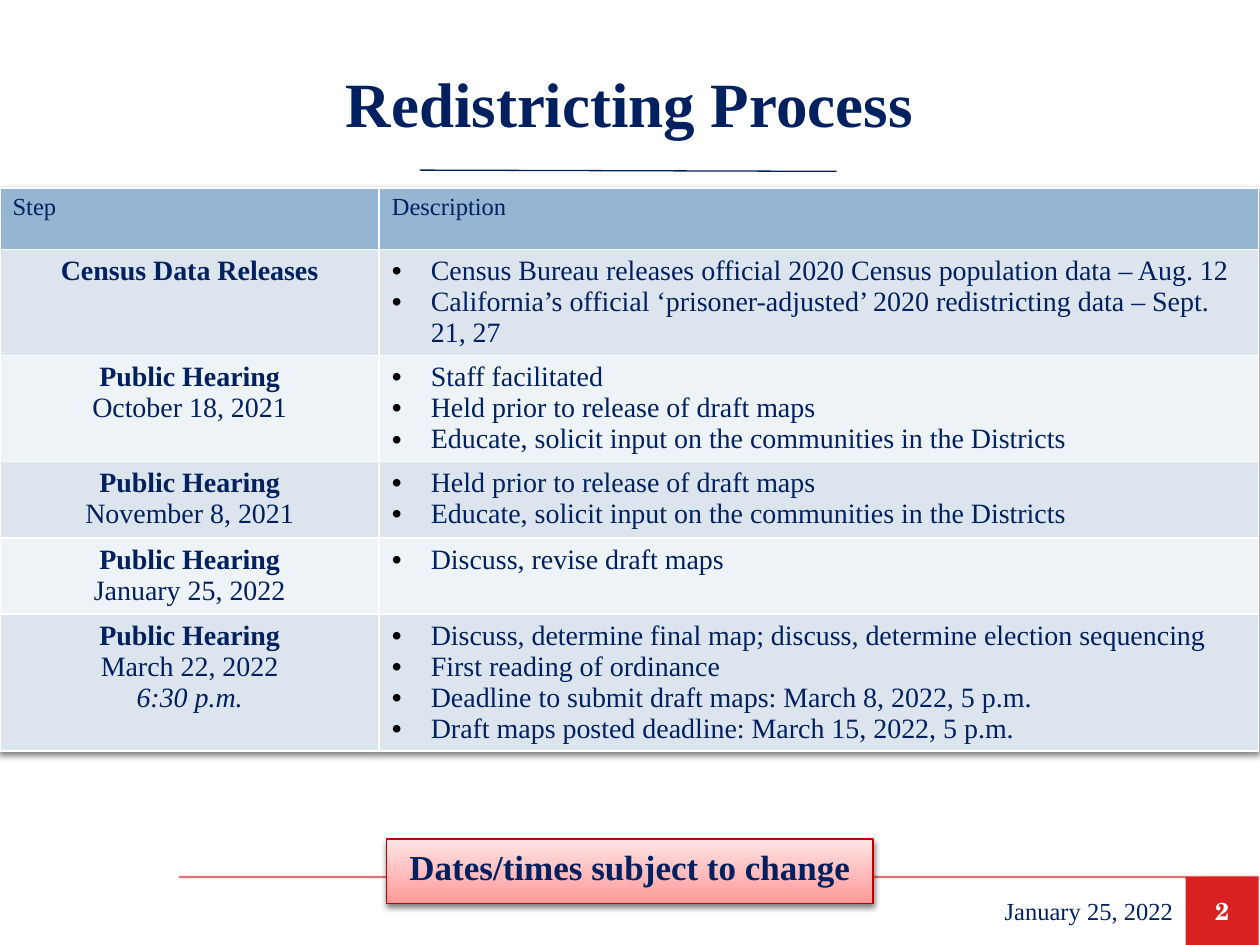
from lxml.etree import SubElement
from pptx import Presentation
from pptx.dml.color import RGBColor
from pptx.enum.shapes import MSO_CONNECTOR, MSO_SHAPE
from pptx.enum.text import MSO_ANCHOR, MSO_AUTO_SIZE, PP_ALIGN
from pptx.oxml.ns import qn
from pptx.util import Inches, Pt

NAVY, WHITE, RED = "002060", "FFFFFF", "D92121"
SERIF = "Times New Roman"
HEADER = ["Step", "Description"]
HELD = "Held prior to release of draft maps"
EDUCATE = "Educate, solicit input on the communities in the Districts"
# Row height, step lines, description bullets
STEPS = [
    (0.84, ["Census Data Releases"],
     ["Census Bureau releases official 2020 Census population data – Aug. 12",
      "California’s official ‘prisoner-adjusted’ 2020 redistricting data – Sept. 21, 27"]),
    (0.84, ["Public Hearing", "October 18, 2021"],
     ["Staff facilitated", HELD, EDUCATE]),
    (0.61, ["Public Hearing", "November 8, 2021"], [HELD, EDUCATE]),
    (0.6, ["Public Hearing", "January 25, 2022"], ["Discuss, revise draft maps"]),
    (1.08, ["Public Hearing", "March 22, 2022", "6:30 p.m."],
     ["Discuss, determine final map; discuss, determine election sequencing",
      "First reading of ordinance",
      "Deadline to submit draft maps: March 8, 2022, 5 p.m.",
      "Draft maps posted deadline: March 15, 2022, 5 p.m."]),
]


def color(value):
    return RGBColor.from_string(value)


def format_runs(paragraph, size, bold=False, italic=False, value=NAVY, name=SERIF):
    for run in paragraph.runs:
        font = run.font
        font.name, font.size = name, Pt(size)
        font.bold, font.italic = bold, italic
        font.color.rgb = color(value)


def place(shape, box):
    shape.left, shape.top, shape.width, shape.height = map(Inches, box)


def set_text(shape, text, size, align, anchor, **style):
    frame = shape.text_frame
    frame.text = text
    frame.word_wrap = True
    frame.auto_size = MSO_AUTO_SIZE.NONE
    frame.vertical_anchor = anchor
    frame.paragraphs[0].alignment = align
    format_runs(frame.paragraphs[0], size, **style)


def add_shadow(parent):
    effects = SubElement(parent, qn("a:effectLst"))
    shadow = SubElement(effects, qn("a:outerShdw"), blurRad="40000", dist="23000",
                        dir="5400000", rotWithShape="0")
    black = SubElement(shadow, qn("a:srgbClr"), val="000000")
    SubElement(black, qn("a:alpha"), val="50000")
    return effects


def add_line(slide, start, end, value, width, opacity=100):
    line = slide.shapes.add_connector(
        MSO_CONNECTOR.STRAIGHT, *map(Inches, start + end))
    line.line.color.rgb = color(value)
    line.line.width = Pt(width)
    properties = line._element.spPr
    if opacity < 100:
        SubElement(properties.find(".//" + qn("a:srgbClr")), qn("a:alpha"),
                   val=str(opacity * 1000))
    SubElement(properties, qn("a:effectLst"))


def add_title(slide, box):
    title = slide.shapes.title
    place(title, box)
    set_text(title, "Redistricting Process", 36, PP_ALIGN.CENTER,
             MSO_ANCHOR.MIDDLE, bold=True)
    left, top, width, height = box
    bottom = top + height
    add_line(slide, (3.33, bottom), (6.64, bottom + 0.01), NAVY, 0.75)


def add_footer(slide, box):
    left, top, width, height = box
    right, number_width, date_width = left + width, 0.58, 1.74
    add_line(slide, (left, top), (right, top), "C80000", 1.25, opacity=55)

    # Slide number
    number_left = right - number_width
    number = slide.shapes.add_shape(
        MSO_SHAPE.RECTANGLE, *map(Inches, (number_left, top, number_width, height)))
    number.shadow.inherit = False
    number.fill.solid()
    number.fill.fore_color.rgb = color(RED)
    number.line.fill.background()
    set_text(number, "2", 14, PP_ALIGN.CENTER, MSO_ANCHOR.MIDDLE,
             bold=True, value=WHITE, name="TeX Gyre Schola")

    # Date
    date = slide.shapes.add_textbox(
        *map(Inches, (number_left - date_width, top, date_width, height)))
    set_text(date, "January 25, 2022", 14, PP_ALIGN.RIGHT, MSO_ANCHOR.MIDDLE)


def add_bullet(paragraph):
    properties = paragraph._p.get_or_add_pPr()
    properties.set("marL", str(Inches(0.31)))
    properties.set("indent", str(-Inches(0.31)))
    bullet_color = SubElement(properties, qn("a:buClr"))
    SubElement(bullet_color, qn("a:srgbClr"), val="000000")
    SubElement(properties, qn("a:buFont"), typeface="Arial")
    SubElement(properties, qn("a:buChar"), char="•")


def fill_cell(cell, lines, fill):
    cell.fill.solid()
    cell.fill.fore_color.rgb = color(fill)
    cell.text_frame.text = "\n".join(lines)
    return cell.text_frame.paragraphs


def add_process_table(slide, box):
    table = slide.shapes.add_table(len(STEPS) + 1, 2, *map(Inches, box)).table
    properties = table._tbl.tblPr
    properties.insert(0, add_shadow(properties))
    table.columns[0].width = Inches(3.01)
    table.columns[1].width = Inches(box[2] - 3.01)

    # Header row
    table.rows[0].height = Inches(0.49)
    for column, label in enumerate(HEADER):
        for paragraph in fill_cell(table.cell(0, column), [label], "94B6D2"):
            format_runs(paragraph, 14)

    # One row for each step
    for row, (height, step, description) in enumerate(STEPS, start=1):
        table.rows[row].height = Inches(height)
        fill = "DCE5EE" if row % 2 else "EEF3F7"
        for index, paragraph in enumerate(fill_cell(table.cell(row, 0), step, fill)):
            paragraph.alignment = PP_ALIGN.CENTER
            format_runs(paragraph, 16, bold=index == 0, italic=index == 2)
        for paragraph in fill_cell(table.cell(row, 1), description, fill):
            add_bullet(paragraph)
            format_runs(paragraph, 16)


def add_notice(slide, box):
    notice = slide.placeholders[1]
    place(notice, box)
    notice.fill.gradient()
    notice.fill.gradient_angle = 270
    for stop, value in zip(notice.fill.gradient_stops, ("FFE4E4", "FF9A9A")):
        stop.color.rgb = color(value)
    notice.line.color.rgb = color("C00000")
    notice.line.width = Pt(0.75)
    add_shadow(notice._element.spPr)
    set_text(notice, "Dates/times subject to change", 20, PP_ALIGN.CENTER,
             MSO_ANCHOR.TOP, bold=True)
    paragraph = notice.text_frame.paragraphs[0]
    paragraph.space_before = Pt(0)
    properties = paragraph._p.get_or_add_pPr()
    properties.set("marL", "0")
    properties.set("indent", "0")
    SubElement(properties, qn("a:buNone"))
    # Bring the notice in front of the footer line
    slide.shapes._spTree.append(notice._element)


def main():
    presentation = Presentation()
    presentation.slide_width, presentation.slide_height = Inches(10), Inches(7.5)
    slide = presentation.slides.add_slide(presentation.slide_layouts[1])
    add_title(slide, (0.37, 0.27, 9.25, 1.08))
    add_footer(slide, (1.42, 6.96, 8.57, 0.54))
    add_process_table(slide, (0, 1.49, 9.99, 4.46))
    add_notice(slide, (3.07, 6.66, 3.86, 0.51))
    presentation.save("out.pptx")


if __name__ == "__main__":
    main()
